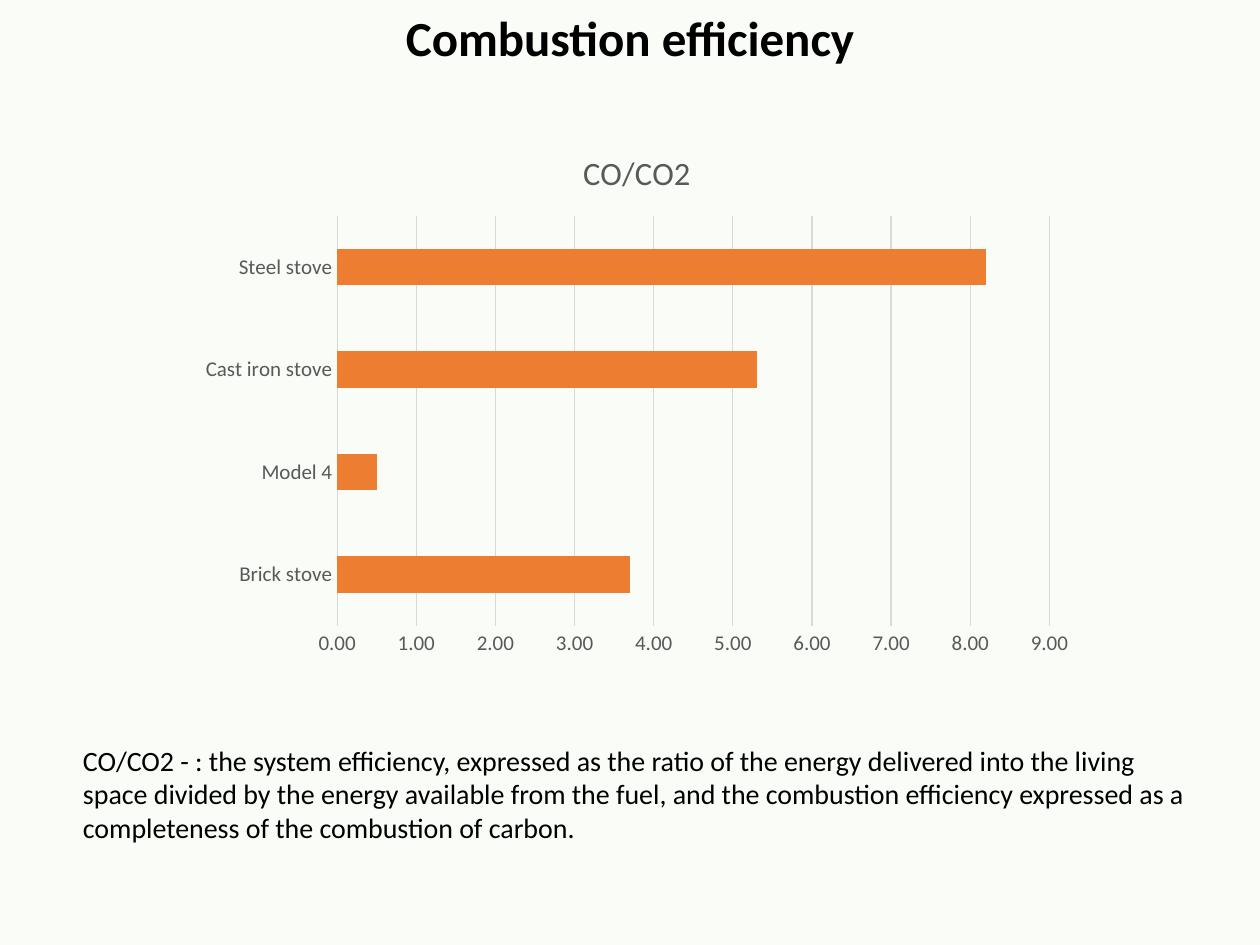
from pptx import Presentation
from pptx.chart.data import CategoryChartData
from pptx.dml.color import RGBColor
from pptx.enum.chart import XL_CHART_TYPE as ChartType, XL_TICK_MARK as TickMark
from pptx.enum.text import MSO_ANCHOR as Anchor, MSO_AUTO_SIZE as AutoSize, PP_ALIGN as Align
from pptx.util import Inches, Pt

COLORS = {
    "background": "F9FCF7",
    "text": "000000",
    "label": "595959",
    "grid": "D9D9D9",
    "bar": "ED7D31",
}
FONT = "Calibri"


def style_font(font, size, color, bold=False):
    font.name = FONT
    font.size = Pt(size)
    font.bold = bold
    font.color.rgb = RGBColor.from_string(COLORS[color])


def add_text(box, text, size, bold=False, align=Align.LEFT, anchor=Anchor.TOP):
    frame = slide.shapes.add_textbox(*map(Inches, box)).text_frame
    frame.word_wrap = True
    frame.auto_size = AutoSize.SHAPE_TO_FIT_TEXT
    frame.vertical_anchor = anchor
    paragraph = frame.paragraphs[0]
    paragraph.alignment = align
    run = paragraph.add_run()
    run.text = text
    style_font(run.font, size, "text", bold)


prs = Presentation()
prs.slide_width = Inches(10)
prs.slide_height = Inches(7.5)
slide = prs.slides.add_slide(prs.slide_layouts[6])
slide.background.fill.solid()
slide.background.fill.fore_color.rgb = RGBColor.from_string(COLORS["background"])

add_text((0, 0.01, 10, 0.57), "Combustion efficiency", 28, True, Align.CENTER, Anchor.MIDDLE)

emissions = CategoryChartData(number_format="0.00")
emissions.categories = ["Brick stove", "Model 4", "Cast iron stove", "Steel stove"]
emissions.add_series("Series 1", [3.7, 0.5, 5.3, 8.2])
chart = slide.shapes.add_chart(
    ChartType.BAR_CLUSTERED,
    Inches(1.49), Inches(1.01), Inches(7.13), Inches(4.28),
    emissions,
).chart
style_font(chart.font, 10, "text")
chart.has_legend = False
chart.has_title = True
chart_title = chart.chart_title.text_frame.paragraphs[0].add_run()
chart_title.text = "СO/CO2"
style_font(chart_title.font, 18.6, "label")
chart.chart_title.include_in_layout = False

plot = chart.plots[0]
plot.vary_by_categories = False
plot.gap_width = 182
bars = plot.series[0].format.fill
bars.solid()
bars.fore_color.rgb = RGBColor.from_string(COLORS["bar"])

stoves, ratio = chart.category_axis, chart.value_axis
for axis in (stoves, ratio):
    axis.major_tick_mark = TickMark.NONE
    axis.minor_tick_mark = TickMark.NONE
    style_font(axis.tick_labels.font, 12, "label")

ratio.minimum_scale = 0
ratio.maximum_scale = 9
ratio.major_unit = 1
ratio.has_major_gridlines = True
ratio.tick_labels.number_format = "0.00"
ratio.tick_labels.number_format_is_linked = False
ratio.format.line.fill.background()
for line in (stoves.format.line, ratio.major_gridlines.format.line):
    line.width = Pt(0.75)
    line.color.rgb = RGBColor.from_string(COLORS["grid"])

add_text(
    (0.56, 5.85, 9.02, 0.91),
    "CO/CO2 - : the system efficiency, expressed as the ratio of the energy delivered "
    "into the living space divided by the energy available from the fuel, and the "
    "combustion efficiency expressed as a completeness of the combustion of carbon.",
    16,
)

prs.save("out.pptx")
